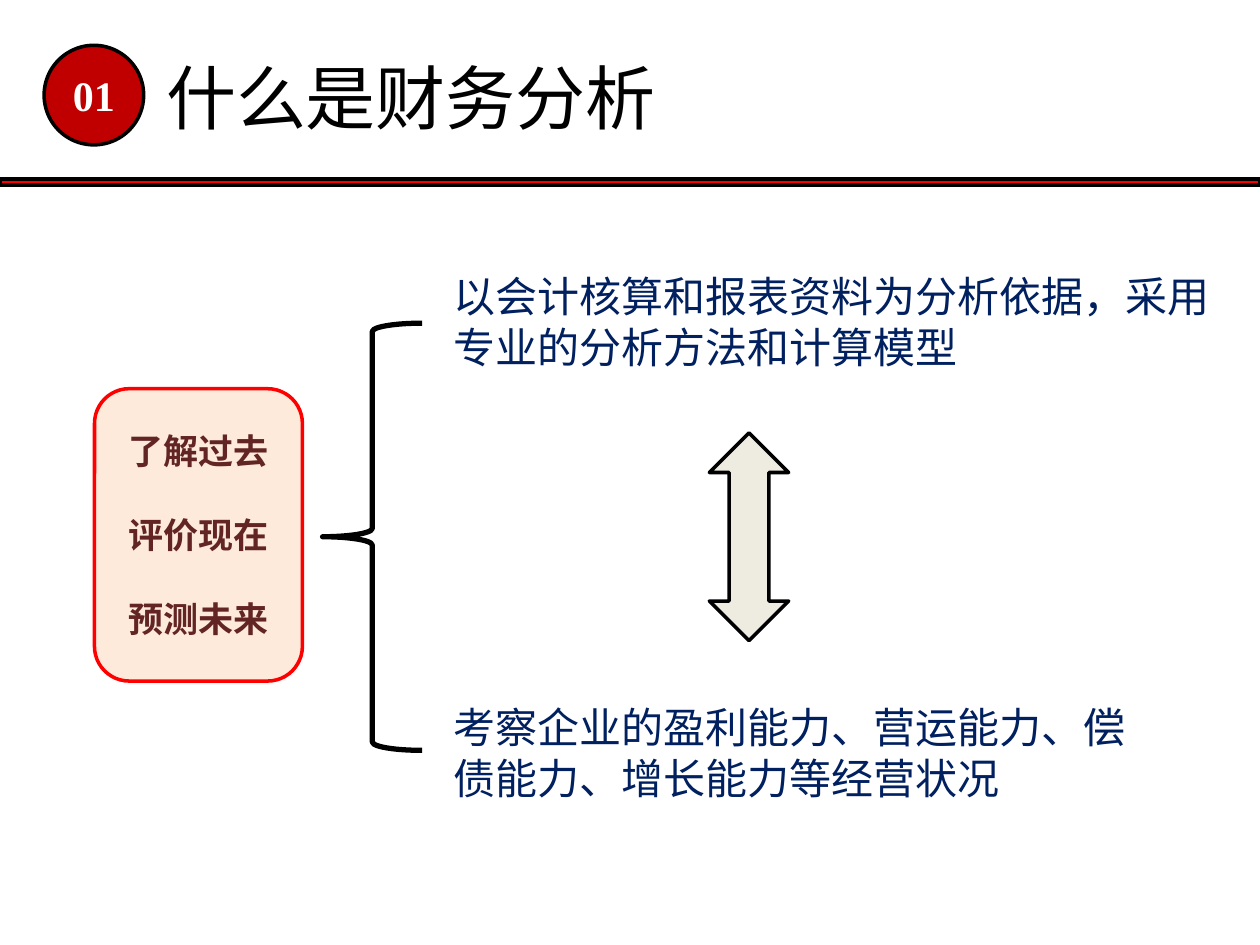
import pptx
import pptx.dml.color
import pptx.enum.shapes
import pptx.enum.text
import pptx.oxml.ns
import pptx.util
from lxml import etree

Inches = pptx.util.Inches
Pt = pptx.util.Pt
RGBColor = pptx.dml.color.RGBColor
SHAPE = pptx.enum.shapes.MSO_SHAPE
ALIGN = pptx.enum.text.PP_ALIGN
ANCHOR = pptx.enum.text.MSO_ANCHOR

BLACK = RGBColor(0x00, 0x00, 0x00)
WHITE = RGBColor(0xFF, 0xFF, 0xFF)
RED = RGBColor(0xFF, 0x00, 0x00)
DARK_RED = RGBColor(0xC0, 0x00, 0x00)
NAVY = RGBColor(0x00, 0x20, 0x60)
PEACH = RGBColor(0xFD, 0xEA, 0xDA)
BROWN = RGBColor(0x63, 0x25, 0x23)
CREAM = RGBColor(0xEE, 0xEC, 0xE1)

CHINESE_FONT = "Noto Sans CJK SC"
NUMBER_FONT = "Times New Roman"
LINE_HEIGHT = 1.2


def write_text(frame, lines, size, color, font=CHINESE_FONT, bold=False,
               align=ALIGN.LEFT, anchor=ANCHOR.TOP, wrap=False, gap=0):
    frame.word_wrap = wrap
    frame.vertical_anchor = anchor
    for index, line in enumerate(lines):
        paragraph = frame.paragraphs[0] if index == 0 else frame.add_paragraph()
        paragraph.alignment = align
        paragraph.line_spacing = Pt(size * LINE_HEIGHT)
        paragraph.space_before = Pt(gap if index else 0)
        run = paragraph.add_run()
        run.text = line
        run.font.size = Pt(size)
        run.font.bold = bold
        run.font.color.rgb = color
        run.font.name = font
        east_asian = etree.SubElement(run.font._element, pptx.oxml.ns.qn("a:ea"))
        east_asian.set("typeface", font)


def add_outlined(slide, kind, left, top, width, height, fill, line=BLACK, weight=2):
    shape = slide.shapes.add_shape(
        kind, Inches(left), Inches(top), Inches(width), Inches(height))
    shape.shadow.inherit = False
    if fill is None:
        shape.fill.background()
    else:
        shape.fill.solid()
        shape.fill.fore_color.rgb = fill
    shape.line.color.rgb = line
    shape.line.width = Pt(weight)
    return shape


def add_lines(slide, left, top, width, height, lines, size, color):
    box = slide.shapes.add_textbox(
        Inches(left), Inches(top), Inches(width), Inches(height))
    write_text(box.text_frame, lines, size, color)


def add_header(slide, left, top, width, number, title):
    add_outlined(slide, SHAPE.RECTANGLE, left, top + 1.42, width, 0.05, RED)
    badge = add_outlined(slide, SHAPE.OVAL, left + 0.35, top + 0.36, 0.79, 0.79, DARK_RED)
    write_text(badge.text_frame, [number], 24, WHITE, font=NUMBER_FONT, bold=True,
               align=ALIGN.CENTER, anchor=ANCHOR.MIDDLE, wrap=True)
    add_lines(slide, left + 1.22, top + 0.38, 4.13, 0.77, [title], 40, BLACK)


def add_definition(slide, left, top, height, goals, basis, purpose):
    middle = top + height / 2
    add_outlined(slide, SHAPE.LEFT_BRACE, left + 1.81, middle - 1.7, 0.79, 3.39,
                 None, weight=3)
    add_lines(slide, left + 2.75, top, 6.26, 0.91, basis, 24, NAVY)
    add_lines(slide, left + 2.75, top + height - 0.91, 5.59, 0.91, purpose, 24, NAVY)
    goal_box = add_outlined(slide, SHAPE.ROUNDED_RECTANGLE, left, middle - 1.18,
                            1.65, 2.32, PEACH, line=RED)
    write_text(goal_box.text_frame, goals, 20, BROWN, bold=True, align=ALIGN.CENTER,
               anchor=ANCHOR.MIDDLE, wrap=True, gap=20 * LINE_HEIGHT)
    add_outlined(slide, SHAPE.UP_DOWN_ARROW, left + 4.88, middle - 0.83, 0.63, 1.65, CREAM)


def main():
    presentation = pptx.Presentation()
    presentation.slide_width = Inches(10)
    presentation.slide_height = Inches(7.5)
    slide = presentation.slides.add_slide(presentation.slide_layouts[6])
    add_header(slide, 0, 0, 10, "01", "什么是财务分析")
    add_definition(
        slide, 0.75, 2.1, 4.33,
        goals=["了解过去", "评价现在", "预测未来"],
        basis=["以会计核算和报表资料为分析依据，采用", "专业的分析方法和计算模型"],
        purpose=["考察企业的盈利能力、营运能力、偿", "债能力、增长能力等经营状况"])
    presentation.save("out.pptx")


if __name__ == "__main__":
    main()
